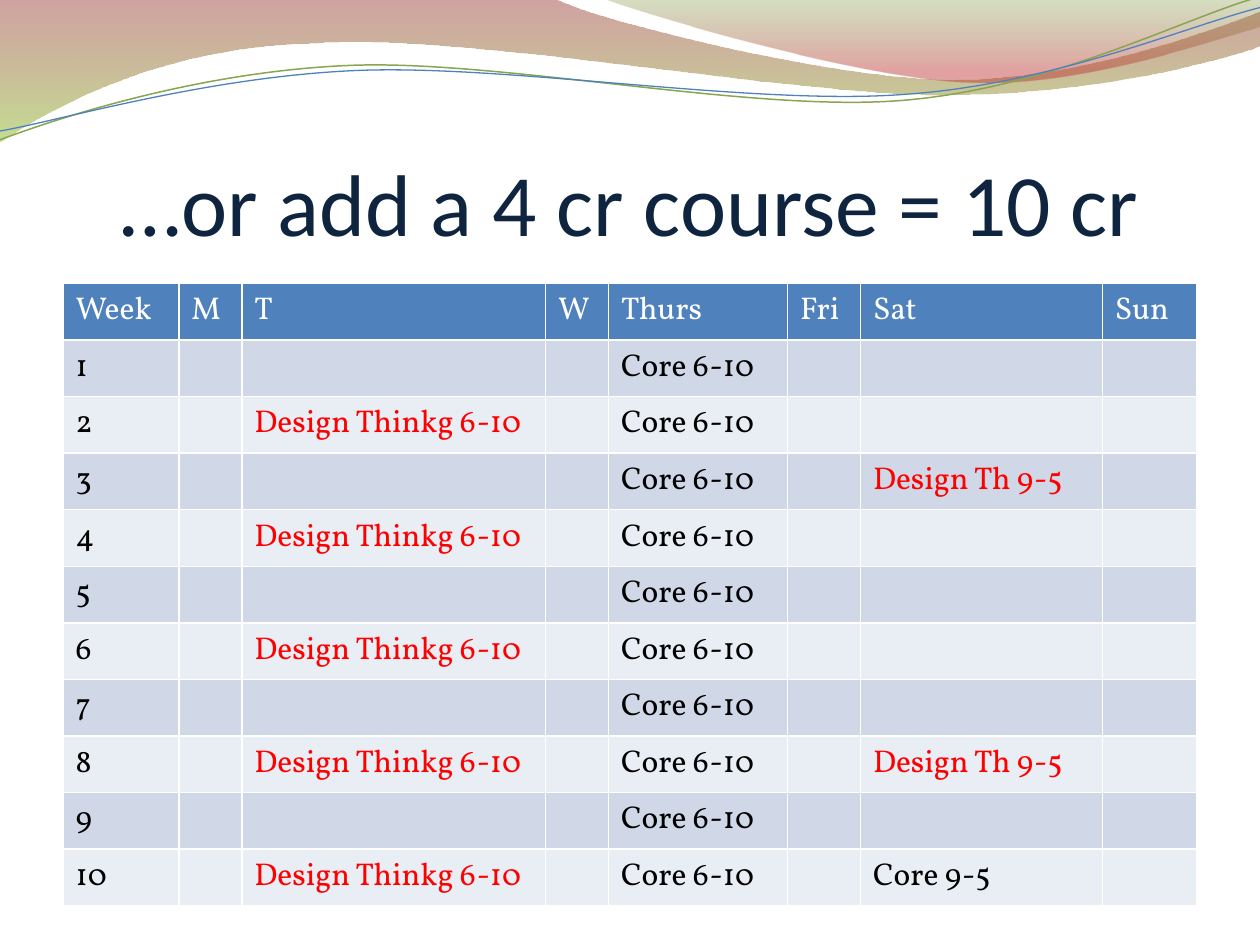
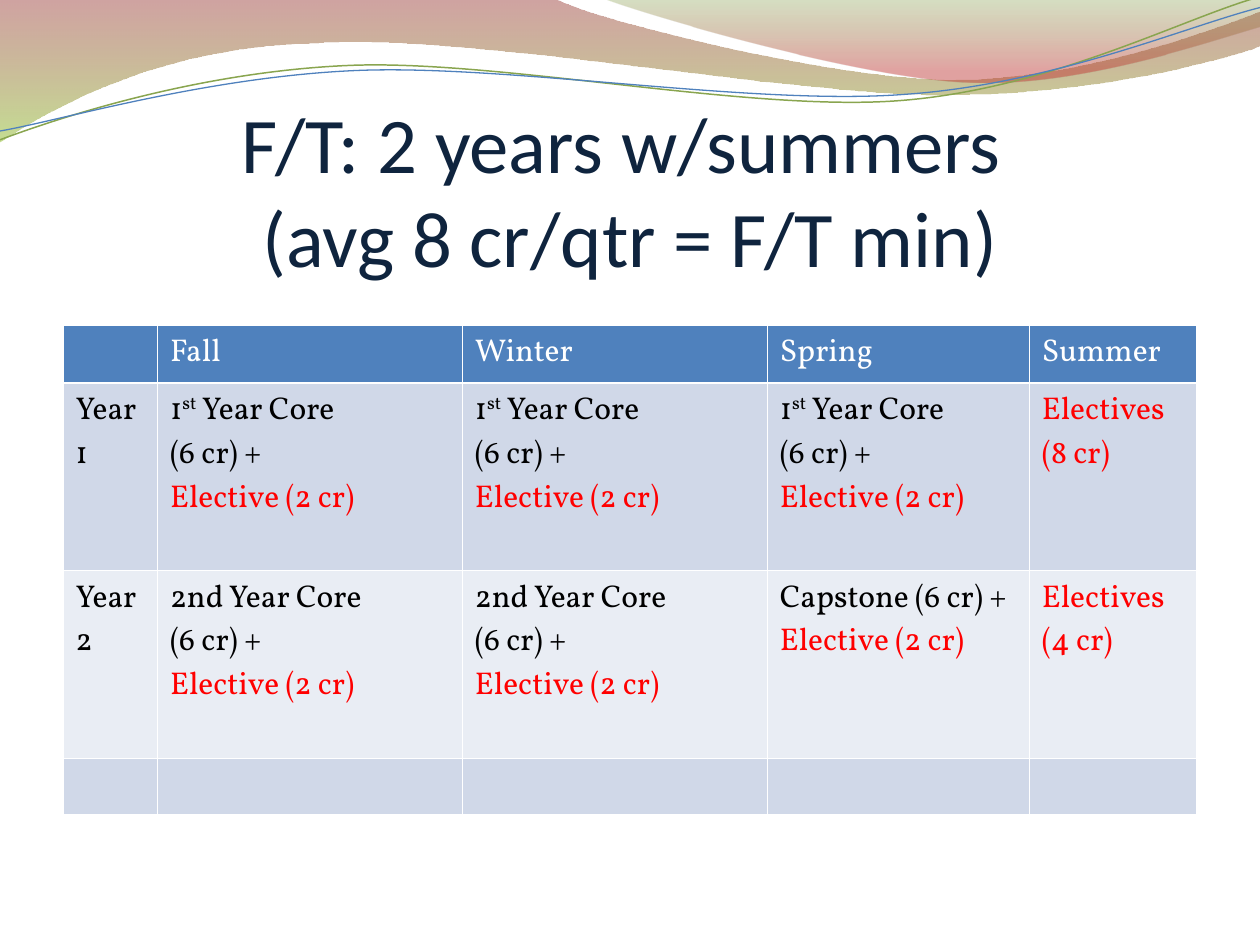
from dataclasses import dataclass

from lxml import etree
from pptx import Presentation
from pptx.dml.color import RGBColor
from pptx.enum.text import MSO_ANCHOR, MSO_AUTO_SIZE, PP_ALIGN
from pptx.oxml import parse_xml
from pptx.oxml.ns import nsdecls, qn
from pptx.util import Inches, Pt

WHITE = RGBColor(0xFF, 0xFF, 0xFF)
BLACK = RGBColor(0x00, 0x00, 0x00)
RED = RGBColor(0xFF, 0x00, 0x00)
NAVY = RGBColor(0x0F, 0x24, 0x3E)
BLUE = RGBColor(0x4F, 0x81, 0xBD)
GREEN = RGBColor(0x89, 0xA5, 0x4F)
BANDS = RGBColor(0xD0, 0xD8, 0xE8), RGBColor(0xE9, 0xED, 0xF4)
WINE, LIME = RGBColor(0x97, 0x33, 0x30), RGBColor(0x95, 0xC2, 0x38)
OLIVE, ROSE = RGBColor(0x76, 0x95, 0x37), RGBColor(0xBE, 0x33, 0x30)
TITLE_FONT, TABLE_FONT = "Calibri", "Vollkorn"
MARGIN, TABLE_W, TITLE_H = 0.5, 9, 1.25


@dataclass
class Run:
    text: str
    color: RGBColor = BLACK
    raised: bool = False


# Content: a cell is a list of paragraphs, a paragraph is a list of runs
def plain(text):
    return [[Run(text)]]


def red(*lines):
    return [[Run(line, RED)] for line in lines]


TUESDAY, SATURDAY = red("Design Thinkg 6-10"), red("Design Th 9-5")
SATURDAYS = {3: SATURDAY, 8: SATURDAY, 10: plain("Core 9-5")}
WEEKS = [
    [plain(str(week)), [], TUESDAY if week % 2 == 0 else [], [],
     plain("Core 6-10"), [], SATURDAYS.get(week, []), []]
    for week in range(1, 11)
]

CORE_END = plain("(6 cr) +") + red("Elective (2 cr)")
CORE_1 = [[Run("1"), Run("st", raised=True), Run(" Year Core")]] + CORE_END
CORE_2 = plain("2nd Year Core") + CORE_END
CAPSTONE = [[Run("Capstone (6 cr) + "), Run("Elective (2 cr)", RED)]]
YEARS = [
    [plain("Year 1"), CORE_1, CORE_1, CORE_1, red("Electives", "(8 cr)")],
    [plain("Year 2"), CORE_2, CORE_2, CAPSTONE, red("Electives", "(4 cr)")],
    [[]] * 5,
]

SLIDES = [
    dict(title="…or add a 4 cr course = 10 cr", size=50, title_top=0.77,
         table_top=2.25, header=["Week", "M", "T", "W", "Thurs", "Fri", "Sat", "Sun"],
         widths=[0.92, 0.5, 2.41, 0.5, 1.42, 0.58, 1.92, 0.75],
         heights=[0.41] * 11, body=WEEKS),
    dict(title="F/T: 2 years w/summers \v(avg 8 cr/qtr = F/T min)", size=45, title_top=1,
         table_top=2.58, header=["", "Fall", "Winter", "Spring", "Summer"],
         widths=[0.75, 2.42, 2.42, 2.08, 1.33],
         heights=[0.46, 1.49, 1.49, 0.45], body=YEARS),
]

# Waves: steps of two numbers are straight, steps of six are Bezier curves
WAVES = [
    dict(steps=[(0, 0), (4.4, -0.01), (4.76, 0.17, 6.64, 0.63, 7.58, 0.63),
                (8.53, 0.63, 9.58, 0.26, 10, 0.09), (10.01, 0.36),
                (9.83, 0.44, 8.7, 0.76, 7.46, 0.75),
                (6.22, 0.75, 3.82, 0.28, 2.57, 0.34),
                (1.29, 0.36, 0.46, 0.83, -0.01, 1.13), (0, 0)],
         stops=[(0, WINE, 45), (100, LIME, 55)]),
    dict(steps=[(4.79, -0.01), (5.09, 0.11, 6.82, 0.62, 7.69, 0.65),
                (8.56, 0.69, 9.61, 0.32, 10, 0.21), (10, 0), (4.79, -0.01)],
         stops=[(0, OLIVE, 30), (80, ROSE, 45)]),
    dict(steps=[(0, 1.11), (0.48, 0.93, 1.58, 0.57, 2.77, 0.52),
                (3.95, 0.47, 5.93, 0.89, 7.13, 0.8),
                (8.33, 0.71, 9.38, 0.15, 9.98, -0.02)],
         line=(GREEN, 0.85)),
    dict(steps=[(0, 1.04), (0.47, 0.96, 1.64, 0.61, 2.83, 0.56),
                (4.03, 0.51, 5.97, 0.84, 7.17, 0.75),
                (8.36, 0.67, 9.41, 0.21, 10, 0.06)],
         line=(BLUE, 0.75)),
]


def build_wave(slide, steps, closed):
    """Build a freeform through all points, then join triples into curves."""
    points = [(Inches(step[i]), Inches(step[i + 1]))
              for step in steps for i in range(0, len(step), 2)]
    builder = slide.shapes.build_freeform(*points[0], scale=1)
    builder.add_line_segments(points[1:], close=closed)
    sp = builder.convert_to_shape()
    segments = iter(list(sp.element.iter(qn("a:lnTo"))))
    for step in steps[1:]:
        segment = next(segments)
        if len(step) == 6:
            segment.addprevious(curve := etree.Element(qn("a:cubicBezTo")))
            for part in (segment, next(segments), next(segments)):
                curve.append(part[0])
                part.getparent().remove(part)
    return sp


def gradient(stops):
    gs = "".join(f'<a:gs pos="{pos * 1000}"><a:srgbClr val="{color}">'
                 f'<a:alpha val="{alpha * 1000}"/></a:srgbClr></a:gs>'
                 for pos, color, alpha in stops)
    return parse_xml(f'<a:gradFill {nsdecls("a")} rotWithShape="1"><a:gsLst>{gs}</a:gsLst>'
                     '<a:lin ang="5400000" scaled="0"/></a:gradFill>')


def add_waves(slide, layout):
    """Draw the waves and move them to the layout, behind its placeholders."""
    for i, wave in enumerate(WAVES):
        filled = "stops" in wave
        sp = build_wave(slide, wave["steps"], filled)
        sp.shadow.inherit = False
        if filled:
            sp.line.fill.background()
            geometry = sp.element.spPr.find(qn("a:custGeom"))
            geometry.addnext(gradient(wave["stops"]))
        else:
            sp.fill.background()
            color, width = wave["line"]
            sp.line.color.rgb = color
            sp.line.width = Pt(width)
        layout.shapes.element.insert(2 + i, sp.element)


def set_title(slide, text, size, top):
    sp = slide.shapes.title
    sp.left, sp.top = Inches(MARGIN), Inches(top)
    sp.width, sp.height = Inches(TABLE_W), Inches(TITLE_H)
    tf = sp.text_frame
    tf.text = text
    tf.auto_size = MSO_AUTO_SIZE.NONE
    tf.vertical_anchor = MSO_ANCHOR.BOTTOM
    tf.margin_left = tf.margin_right = tf.margin_bottom = 0
    tf.margin_top = Inches(0.05)
    p = tf.paragraphs[0]
    p.alignment = PP_ALIGN.CENTER
    p.font.size, p.font.name, p.font.color.rgb = Pt(size), TITLE_FONT, NAVY


def set_borders(cell):
    tcPr = cell._tc.get_or_add_tcPr()
    for i, side in enumerate("LRTB"):
        ln = etree.Element(qn(f"a:ln{side}"), w=str(Pt(1)))
        fill = etree.SubElement(ln, qn("a:solidFill"))
        etree.SubElement(fill, qn("a:srgbClr"), val=str(WHITE))
        tcPr.insert(i, ln)


def fill_cell(cell, paragraphs, fill):
    cell.fill.solid()
    cell.fill.fore_color.rgb = fill
    tf = cell.text_frame
    for i, runs in enumerate(paragraphs or [[]]):
        p = tf.add_paragraph() if i else tf.paragraphs[0]
        p.font.size, p.font.name, p.font.bold = Pt(18), TABLE_FONT, False
        for part in runs:
            r = p.add_run()
            r.text = part.text
            r.font.color.rgb = part.color
            if part.raised:
                r.font._element.set("baseline", "30000")


def add_schedule(slide, top, header, widths, heights, body):
    rows = [[[[Run(name, WHITE)]] if name else [] for name in header]] + body
    table = slide.shapes.add_table(
        len(rows), len(header), Inches(MARGIN), Inches(top),
        Inches(TABLE_W), Inches(sum(heights))).table
    for column, width in zip(table.columns, widths):
        column.width = Inches(width)
    for i, (row, height) in enumerate(zip(rows, heights)):
        table.rows[i].height = Inches(height)
        for j, paragraphs in enumerate(row):
            cell = table.cell(i, j)
            fill_cell(cell, paragraphs, BANDS[(i - 1) % 2] if i else BLUE)
            set_borders(cell)


def main():
    prs = Presentation()
    prs.slide_width, prs.slide_height = Inches(10), Inches(7.5)
    layout = prs.slide_layouts[5]
    for i, page in enumerate(SLIDES):
        slide = prs.slides.add_slide(layout)
        if i == 0:
            add_waves(slide, layout)
        set_title(slide, page["title"], page["size"], page["title_top"])
        add_schedule(slide, page["table_top"], page["header"], page["widths"],
                     page["heights"], page["body"])
    prs.save("out.pptx")


if __name__ == "__main__":
    main()
